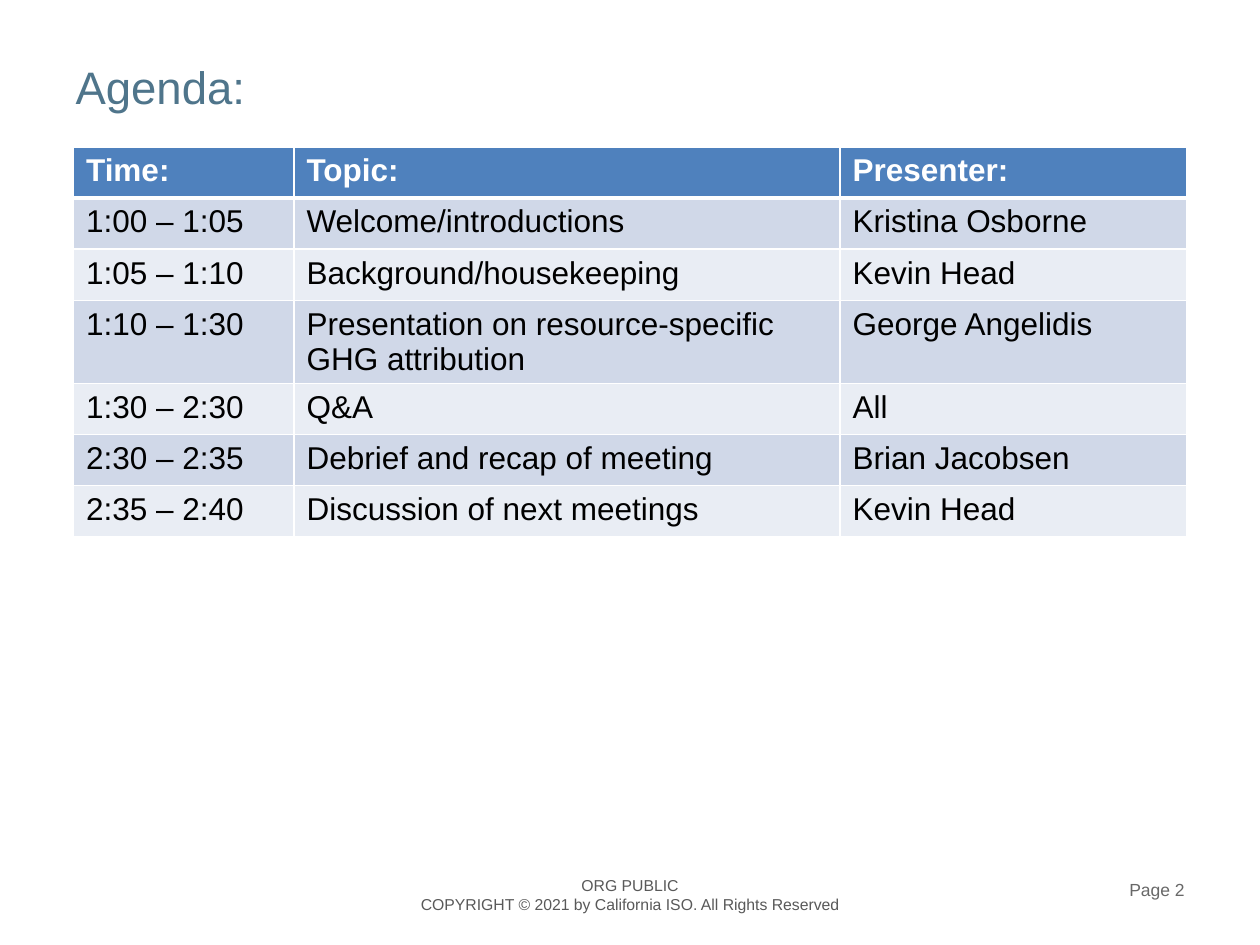
from dataclasses import dataclass

from lxml import etree
from pptx import Presentation
from pptx.dml.color import RGBColor
from pptx.enum import text
from pptx.oxml import ns
from pptx.util import Pt


@dataclass(frozen=True)
class Theme:
    font: str = "Arial"
    title: str = "4F758B"
    header: str = "4F81BD"
    bands: tuple = ("D0D8E8", "E9EDF4")
    white: str = "FFFFFF"
    body: str = "000000"
    footer: str = "595959"
    number: str = "686868"
    title_size: float = 26
    table_size: float = 18
    footer_size: float = 9
    number_size: float = 10


theme = Theme()


def add_span(para, words, size, color, bold=False):
    span = para.add_run()
    span.text = words
    span.font.name = theme.font
    span.font.size = Pt(size)
    span.font.bold = bold
    span.font.color.rgb = RGBColor.from_string(color)


def add_border(cell, side, width):
    properties = cell._tc.get_or_add_tcPr()
    line = etree.SubElement(properties, ns.qn(f"a:{side}"), w=str(Pt(width)))
    fill = etree.SubElement(line, ns.qn("a:solidFill"))
    etree.SubElement(fill, ns.qn("a:srgbClr"), val=theme.white)


deck = Presentation()
deck.slide_width, deck.slide_height = Pt(720), Pt(540)
page = deck.slides.add_slide(deck.slide_layouts[5])

title = page.shapes.title
title.left, title.top, title.width, title.height = Pt(36), Pt(30), Pt(648), Pt(90)
title.text_frame.vertical_anchor = text.MSO_ANCHOR.TOP
title.text_frame.auto_size = text.MSO_AUTO_SIZE.NONE
para = title.text_frame.paragraphs[0]
para.alignment = text.PP_ALIGN.LEFT
add_span(para, "Agenda:", theme.title_size, theme.title)

agenda = [
    ("Time:", "Topic:", "Presenter:"),
    ("1:00 – 1:05", "Welcome/introductions", "Kristina Osborne"),
    ("1:05 – 1:10", "Background/housekeeping", "Kevin Head"),
    ("1:10 – 1:30", "Presentation on resource-specific GHG attribution", "George Angelidis"),
    ("1:30 – 2:30", "Q&A", "All"),
    ("2:30 – 2:35", "Debrief and recap of meeting", "Brian Jacobsen"),
    ("2:35 – 2:40", "Discussion of next meetings", "Kevin Head"),
]
column_widths = (126, 312, 198)
row_height = 29.2

table = page.shapes.add_table(
    len(agenda), len(column_widths), Pt(42), Pt(84),
    Pt(sum(column_widths)), Pt(row_height * len(agenda)),
).table
for column, width in zip(table.columns, column_widths):
    column.width = Pt(width)
for row_index, entries in enumerate(agenda):
    table.rows[row_index].height = Pt(row_height)
    is_header = row_index == 0
    fill_color = theme.header if is_header else theme.bands[(row_index - 1) % 2]
    text_color = theme.white if is_header else theme.body
    top_width = 3 if row_index == 1 else 1
    bottom_width = 3 if is_header else 1
    for column_index, words in enumerate(entries):
        cell = table.cell(row_index, column_index)
        for side, width in (("lnL", 1), ("lnR", 1), ("lnT", top_width), ("lnB", bottom_width)):
            add_border(cell, side, width)
        cell.fill.solid()
        cell.fill.fore_color.rgb = RGBColor.from_string(fill_color)
        add_span(cell.text_frame.paragraphs[0], words, theme.table_size, text_color, is_header)

footers = [
    ((228, 496.8, 264, 28.8),
     ("ORG PUBLIC", "COPYRIGHT © 2021 by California ISO. All Rights Reserved"),
     text.PP_ALIGN.CENTER, theme.footer_size, theme.footer),
    ((516, 499, 168, 28.8), ("Page 2",),
     text.PP_ALIGN.RIGHT, theme.number_size, theme.number),
]
for bounds, lines, alignment, size, color in footers:
    box = page.shapes.add_textbox(*map(Pt, bounds))
    frame = box.text_frame
    frame.word_wrap = True
    for index, words in enumerate(lines):
        para = frame.add_paragraph() if index else frame.paragraphs[0]
        para.alignment = alignment
        add_span(para, words, size, color)

deck.save("out.pptx")
